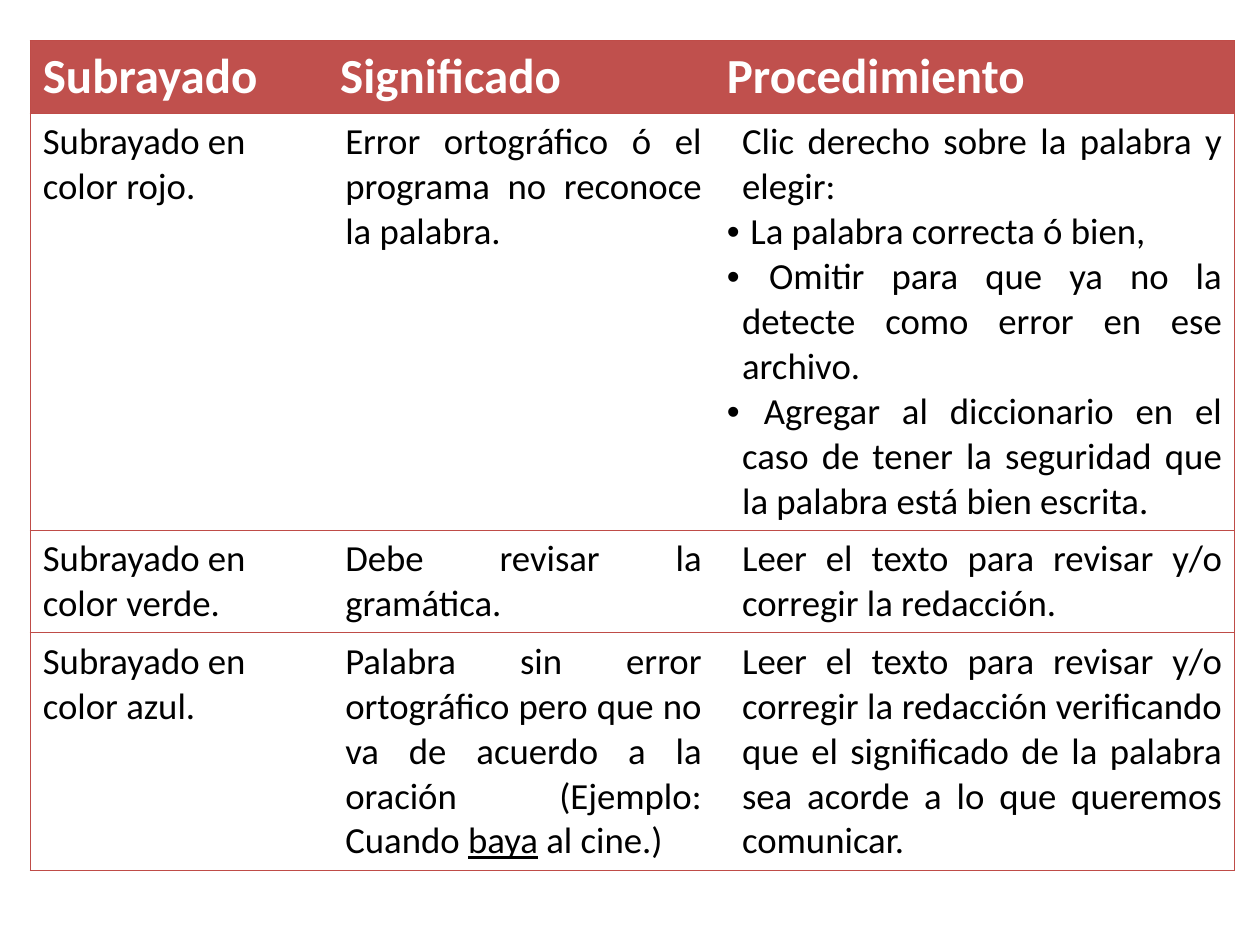
"""Build a slide with a table explaining the coloured underlines of a spelling checker."""
from dataclasses import dataclass

from lxml import etree
from pptx import Presentation
from pptx.dml.color import RGBColor
from pptx.enum.text import PP_ALIGN
from pptx.oxml.ns import qn
from pptx.table import _Cell
from pptx.text.text import _Paragraph
from pptx.util import Inches, Pt

JUSTIFY = PP_ALIGN.JUSTIFY
LEFT = PP_ALIGN.LEFT
RED = RGBColor(0xC0, 0x50, 0x4D)
BORDER = RGBColor(0xBF, 0x4C, 0x48)
WHITE = RGBColor(0xFF, 0xFF, 0xFF)
BLACK = RGBColor(0x00, 0x00, 0x00)
FONT = "Calibri"
SLIDE_WIDTH, SLIDE_HEIGHT = Inches(10), Inches(7.5)
TABLE_LEFT, TABLE_TOP = 0.024, 0.043
COLUMN_SHARES = (0.236, 0.307, 0.413)
COLUMN_INDENTS = (0, 0.004, 0.012)
LINE_SPACING = 1.22
CELL_PADDING = Inches(0.1)


@dataclass(frozen=True)
class Line:
    """One paragraph, given as runs whose odd positions are underlined."""

    runs: tuple[str, ...]
    bullet: bool = False


@dataclass(frozen=True)
class Style:
    """Look of the text and background of a table row."""

    size: int
    color: RGBColor
    bold: bool
    fill: RGBColor


@dataclass(frozen=True)
class Row:
    """A table row, its style and its height in text lines."""

    style: Style
    line_count: int
    cells: tuple[tuple[Line, ...], ...]


HEADER = Style(28, WHITE, True, RED)
BODY = Style(21, BLACK, False, WHITE)


def plain(text: str) -> tuple[Line, ...]:
    """Return cell content of a single plain paragraph."""
    return (Line((text,)),)


ROWS = (
    Row(HEADER, 1, (plain("Subrayado"), plain("Significado"), plain("Procedimiento"))),
    Row(BODY, 9, (
        plain("Subrayado en color rojo."),
        plain("Error ortográfico ó el programa no reconoce la palabra."),
        (
            Line(("Clic derecho sobre la palabra y elegir:",)),
            Line((" La palabra correcta ó bien,",), True),
            Line((" Omitir para que ya no la detecte como error en ese archivo.",), True),
            Line((" Agregar al diccionario en el caso de tener la seguridad que "
                  "la palabra está bien escrita.",), True),
        ),
    )),
    Row(BODY, 2, (
        plain("Subrayado en color verde."),
        plain("Debe revisar la gramática."),
        plain("Leer el texto para revisar y/o corregir la redacción."),
    )),
    Row(BODY, 5, (
        plain("Subrayado en color azul."),
        (Line(("Palabra sin error ortográfico pero que no va de acuerdo a la oración "
               "(Ejemplo: Cuando ", "baya", " al cine.)")),),
        plain("Leer el texto para revisar y/o corregir la redacción verificando que el "
              "significado de la palabra sea acorde a lo que queremos comunicar."),
    )),
)


def set_borders(cell: _Cell, column: int) -> None:
    """Draw horizontal rules and the outer sides, hiding inner vertical rules."""
    properties = cell._tc.get_or_add_tcPr()
    visible = {"L": column == 0, "R": column == len(COLUMN_SHARES) - 1, "T": True, "B": True}
    for side, shown in visible.items():
        rule = etree.SubElement(properties, qn(f"a:ln{side}"), w=str(Pt(0.75)))
        if shown:
            fill = etree.SubElement(rule, qn("a:solidFill"))
            etree.SubElement(fill, qn("a:srgbClr"), val=str(BORDER))
        else:
            etree.SubElement(rule, qn("a:noFill"))


def write_line(paragraph: _Paragraph, line: Line, style: Style, column: int) -> None:
    """Write a paragraph with the alignment and indent of its column."""
    justified = style is BODY and column > 0
    paragraph.alignment = JUSTIFY if justified else LEFT
    if justified:
        indent = int(SLIDE_WIDTH * COLUMN_INDENTS[column])
        properties = paragraph._p.get_or_add_pPr()
        properties.set("marL", str(indent))
        properties.set("indent", str(-indent if line.bullet else 0))
        if line.bullet:
            etree.SubElement(properties, qn("a:buFont"), typeface="Arial")
            etree.SubElement(properties, qn("a:buChar"), char="•")
    for position, text in enumerate(line.runs):
        run = paragraph.add_run()
        run.text = text
        run.font.name = FONT
        run.font.size = Pt(style.size)
        run.font.bold = style.bold
        run.font.color.rgb = style.color
        if position % 2:
            run.font.underline = True


def fill_cell(cell: _Cell, lines: tuple[Line, ...], style: Style, column: int) -> None:
    """Give a cell its borders, background and paragraphs."""
    set_borders(cell, column)
    cell.fill.solid()
    cell.fill.fore_color.rgb = style.fill
    frame = cell.text_frame
    for position, line in enumerate(lines):
        paragraph = frame.add_paragraph() if position else frame.paragraphs[0]
        write_line(paragraph, line, style, column)


def main() -> None:
    """Create and save the presentation."""
    presentation = Presentation()
    presentation.slide_width, presentation.slide_height = SLIDE_WIDTH, SLIDE_HEIGHT
    slide = presentation.slides.add_slide(presentation.slide_layouts[6])
    widths = [int(SLIDE_WIDTH * share) for share in COLUMN_SHARES]
    heights = [int(Pt(row.style.size) * LINE_SPACING * row.line_count) + CELL_PADDING
               for row in ROWS]
    table = slide.shapes.add_table(
        len(ROWS), len(widths), int(SLIDE_WIDTH * TABLE_LEFT),
        int(SLIDE_HEIGHT * TABLE_TOP), sum(widths), sum(heights)).table
    table.horz_banding = False
    for column, width in zip(table.columns, widths):
        column.width = width
    for index, (row, height) in enumerate(zip(ROWS, heights)):
        table.rows[index].height = height
        for column, lines in enumerate(row.cells):
            fill_cell(table.cell(index, column), lines, row.style, column)
    presentation.save("out.pptx")


if __name__ == "__main__":
    main()
